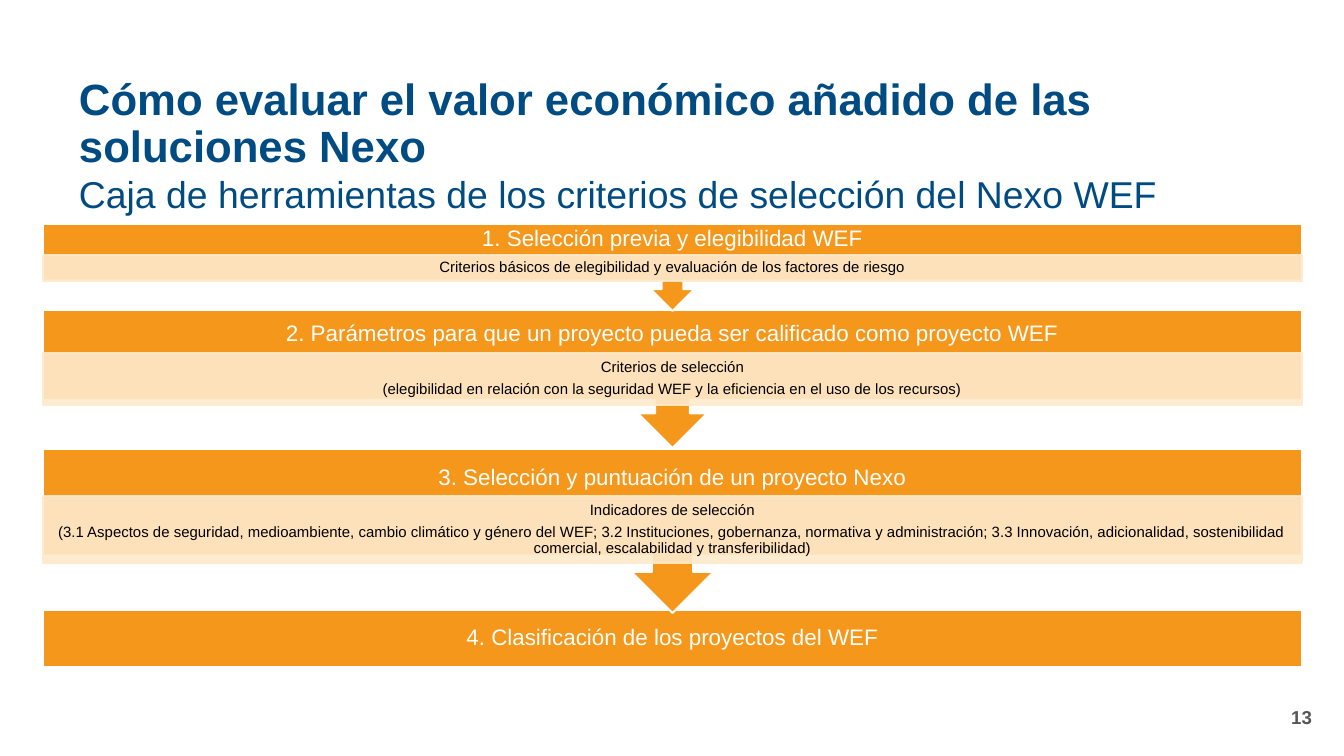
"""Build the slide on the selection criteria toolbox for WEF Nexus projects."""
from dataclasses import dataclass

from lxml import etree
from pptx import Presentation
from pptx import util as u
from pptx.dml.color import RGBColor
from pptx.enum import shapes, text
from pptx.oxml.ns import qn

SCALE = 914400 / 134.4
FONT = "Arial"
BLUE, ORANGE, CREAM = "004C82", "F4971A", "FEEACC"
WHITE, BLACK, GREY = "FFFFFF", "000000", "575756"
LEFT, WIDTH = 43, 1259
CENTER, RIGHT = text.PP_ALIGN.CENTER, text.PP_ALIGN.RIGHT


@dataclass
class Step:
    """One stage of the process, with an optional detail band."""
    heading: str
    top: int
    height: int
    heading_height: int
    band_top: int = 0
    band_height: int = 0
    details: tuple[str, ...] = ()


STEPS = [
    Step("1. Selección previa y elegibilidad WEF", 224, 87, 31, 255, 26,
         ("Criterios básicos de elegibilidad y evaluación de los factores de riesgo",)),
    Step("2. Parámetros para que un proyecto pueda ser calificado como proyecto WEF",
         310, 138, 48, 353, 52,
         ("Criterios de selección",
          "(elegibilidad en relación con la seguridad WEF y la eficiencia en el uso de los recursos)")),
    Step("3. Selección y puntuación de un proyecto Nexo", 449, 164, 58, 496, 67,
         ("Indicadores de selección",
          "(3.1 Aspectos de seguridad, medioambiente, cambio climático y género del WEF; "
          "3.2 Instituciones, gobernanza, normativa y administración; 3.3 Innovación, "
          "adicionalidad, sostenibilidad comercial, escalabilidad y transferibilidad)")),
    Step("4. Clasificación de los proyectos del WEF", 610, 57, 57),
]


def px(n: int) -> int:
    """Turn pixels into EMU."""
    return round(n * SCALE)


def rgb(value: str) -> RGBColor:
    """Turn a hex string into a colour."""
    return RGBColor.from_string(value)


def write(sp, lines, size: float, color: str, align=None, bold: bool = False,
          margins=(12, 12), anchor=text.MSO_ANCHOR.MIDDLE, after: float = 0) -> None:
    """Fill a shape with uniformly formatted paragraphs."""
    tf = sp.text_frame
    tf.word_wrap = True
    tf.auto_size = text.MSO_AUTO_SIZE.NONE
    tf.vertical_anchor = anchor
    tf.margin_left = tf.margin_right = px(margins[0])
    tf.margin_top = tf.margin_bottom = px(margins[1])
    tf.text = "\n".join(lines)
    for p in tf.paragraphs:
        p.alignment = align
        p.line_spacing = 0.9
        p.space_after = u.Pt(after)
        p.font.name, p.font.size, p.font.bold = FONT, u.Pt(size), bold
        p.font.color.rgb = rgb(color)


def add_box(s, kind, top: int, height: int, fill: str, line: str, opacity: int = 100):
    """Add a full-width outlined shape."""
    sp = s.shapes.add_shape(kind, px(LEFT), px(top), px(WIDTH), px(height))
    sp.shadow.inherit = False
    sp.fill.solid()
    sp.fill.fore_color.rgb = rgb(fill)
    sp.line.color.rgb = rgb(line)
    sp.line.width = u.Pt(1)
    if opacity < 100:
        for color in sp._element.spPr.iter(qn("a:srgbClr")):
            etree.SubElement(color, qn("a:alpha"), val=str(opacity * 1000))
    return sp


def add_text(s, left: int, top: int, width: int, height: int):
    """Add an empty text box."""
    return s.shapes.add_textbox(px(left), px(top), px(width), px(height))


def add_step(s, step: Step) -> None:
    """Draw a stage: a heading box, or a callout with its detail band."""
    if step.details:
        sp = add_box(s, shapes.MSO_SHAPE.UP_ARROW_CALLOUT, step.top, step.height, ORANGE, WHITE)
        sp.rotation = 180
        sp = add_text(s, LEFT, step.top, WIDTH, step.heading_height)
    else:
        sp = add_box(s, shapes.MSO_SHAPE.RECTANGLE, step.top, step.height, ORANGE, WHITE)
    write(sp, [step.heading], 12, WHITE, CENTER, after=4.8)
    if step.details:
        band = add_box(s, shapes.MSO_SHAPE.RECTANGLE, step.band_top, step.band_height,
                       CREAM, CREAM, 90)
        write(band, step.details, 8, BLACK, CENTER, margins=(8, 1), after=3.2)


def main() -> None:
    """Build and save the presentation."""
    prs = Presentation()
    prs.slide_width, prs.slide_height = px(1344), px(756)
    s = prs.slides.add_slide(prs.slide_layouts[5])

    title = s.shapes.title
    title.left, title.top, title.width, title.height = px(66), px(85), px(1259), px(79)
    write(title, ["Cómo evaluar el valor económico añadido de las soluciones Nexo"],
          23.4, BLUE, text.PP_ALIGN.LEFT, bold=True, margins=(13, 7))
    write(add_text(s, 66, 176, 1259, 40),
          ["Caja de herramientas de los criterios de selección del Nexo WEF"],
          20, BLUE, margins=(13, 0), anchor=text.MSO_ANCHOR.TOP)

    for step in reversed(STEPS):
        add_step(s, step)

    write(add_text(s, 1023, 699, 302, 40), ["13"], 10, GREY, RIGHT, bold=True, margins=(13, 7))
    prs.save("out.pptx")


if __name__ == "__main__":
    main()
